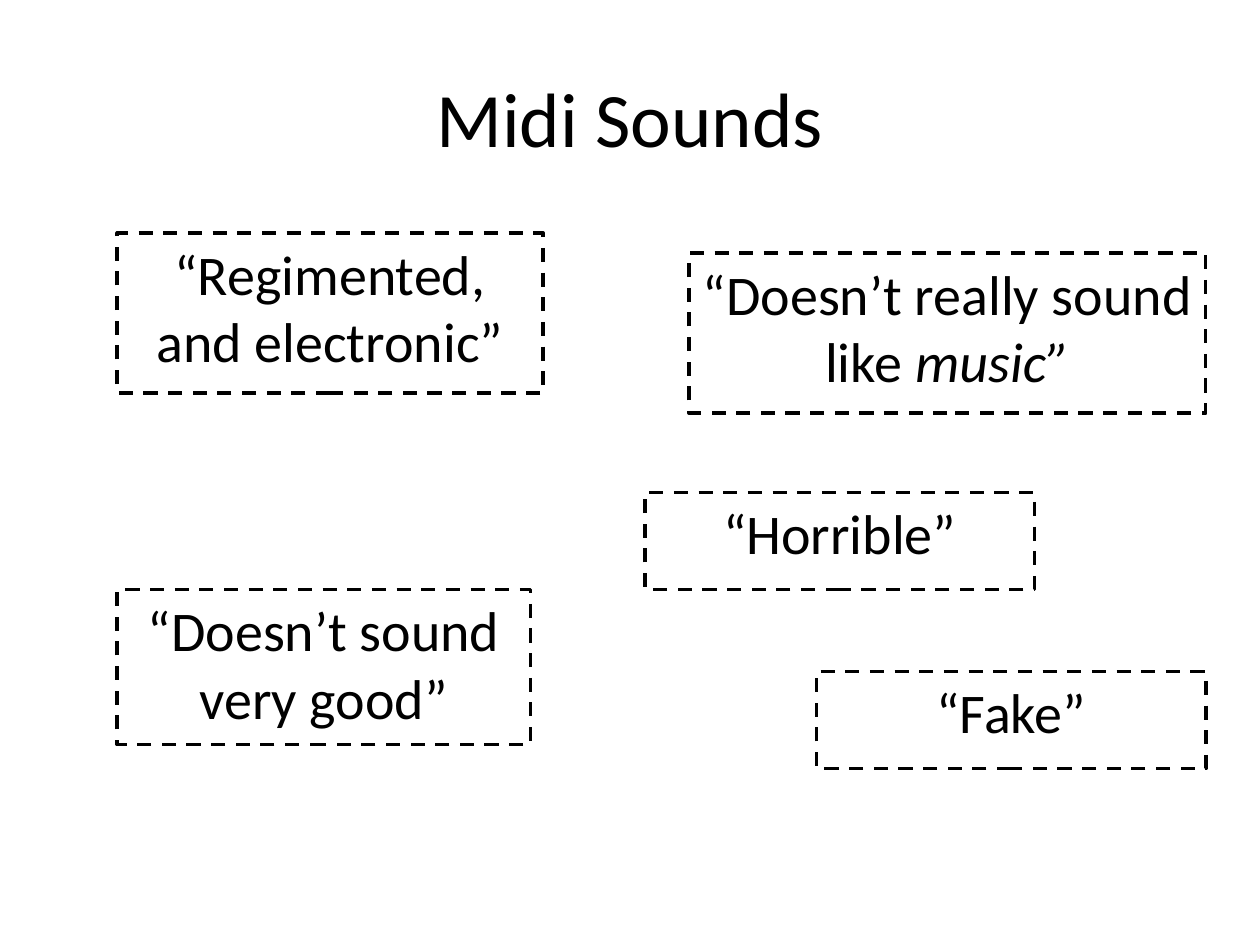
from pptx import Presentation
from pptx.dml.color import RGBColor
from pptx.enum.dml import MSO_LINE
from pptx.enum.shapes import MSO_SHAPE
from pptx.enum.text import MSO_ANCHOR, PP_ALIGN
from pptx.util import Inches, Pt

RECTANGLE = MSO_SHAPE.RECTANGLE
DASH = MSO_LINE.DASH
CENTER = PP_ALIGN.CENTER
TOP, MIDDLE = MSO_ANCHOR.TOP, MSO_ANCHOR.MIDDLE


def color(hex_code):
    return RGBColor.from_string(hex_code)


class QuoteSlide:
    font_name = "Calibri"
    ink = "000000"
    paper = "FFFFFF"
    title_size = 44
    quote_size = 32

    def __init__(self, presentation):
        self.slide = presentation.slides.add_slide(presentation.slide_layouts[6])
        background = self.slide.background.fill
        background.solid()
        background.fore_color.rgb = color(self.paper)

    def add_text(self, shape, runs, size, anchor):
        frame = shape.text_frame
        frame.word_wrap = True
        frame.vertical_anchor = anchor
        paragraph = frame.paragraphs[0]
        paragraph.alignment = CENTER
        for text, italic in runs:
            run = paragraph.add_run()
            run.text = text
            run.font.name = self.font_name
            run.font.size = Pt(size)
            run.font.italic = italic
            run.font.color.rgb = color(self.ink)

    def title(self, text, left, top, width, height):
        box = self.slide.shapes.add_textbox(
            Inches(left), Inches(top), Inches(width), Inches(height))
        self.add_text(box, [(text, False)], self.title_size, MIDDLE)

    def quote(self, runs, left, top, width, height):
        shape = self.slide.shapes.add_shape(
            RECTANGLE, Inches(left), Inches(top), Inches(width), Inches(height))
        shape.shadow.inherit = False
        shape.fill.solid()
        shape.fill.fore_color.rgb = color(self.paper)
        shape.line.color.rgb = color(self.ink)
        shape.line.width = Pt(2)
        shape.line.dash_style = DASH
        self.add_text(shape, runs, self.quote_size, TOP)


def main():
    presentation = Presentation()
    presentation.slide_width = Inches(10)
    presentation.slide_height = Inches(7.5)
    page = QuoteSlide(presentation)

    # Title
    page.title("Midi Sounds", 0.5, 0.3, 9, 1.25)

    # Listener quotes: runs of (text, italic), then left, top, width, height
    quotes = [
        ([("“Doesn’t sound very good”", False)], 0.93, 4.68, 3.28, 1.23),
        ([("“Horrible”", False)], 5.12, 3.91, 3.09, 0.77),
        ([("“Fake”", False)], 6.48, 5.33, 3.09, 0.77),
        ([("“Regimented, and electronic”", False)], 0.93, 1.85, 3.38, 1.27),
        ([("“Doesn’t really sound like ", False), ("music”", True)],
         5.47, 2.01, 4.1, 1.27),
    ]
    for quote in quotes:
        page.quote(*quote)

    presentation.save("out.pptx")


if __name__ == "__main__":
    main()
